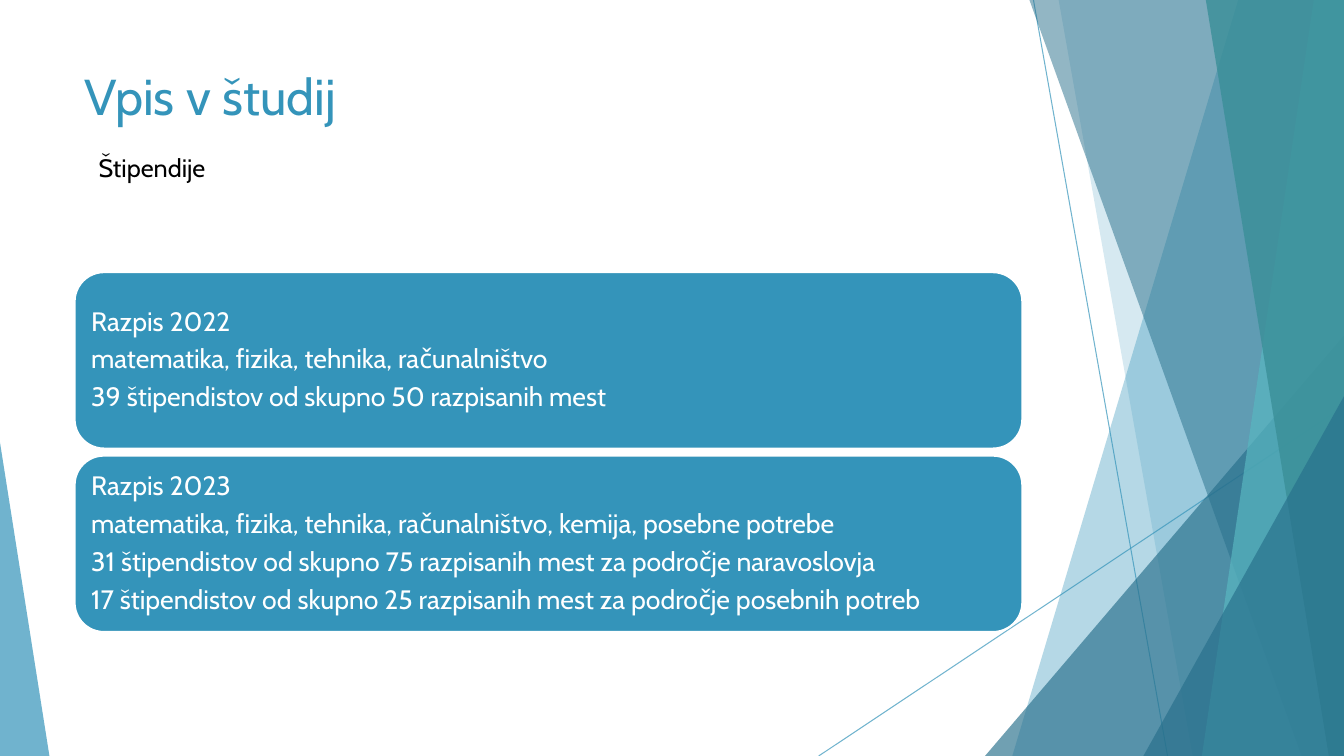
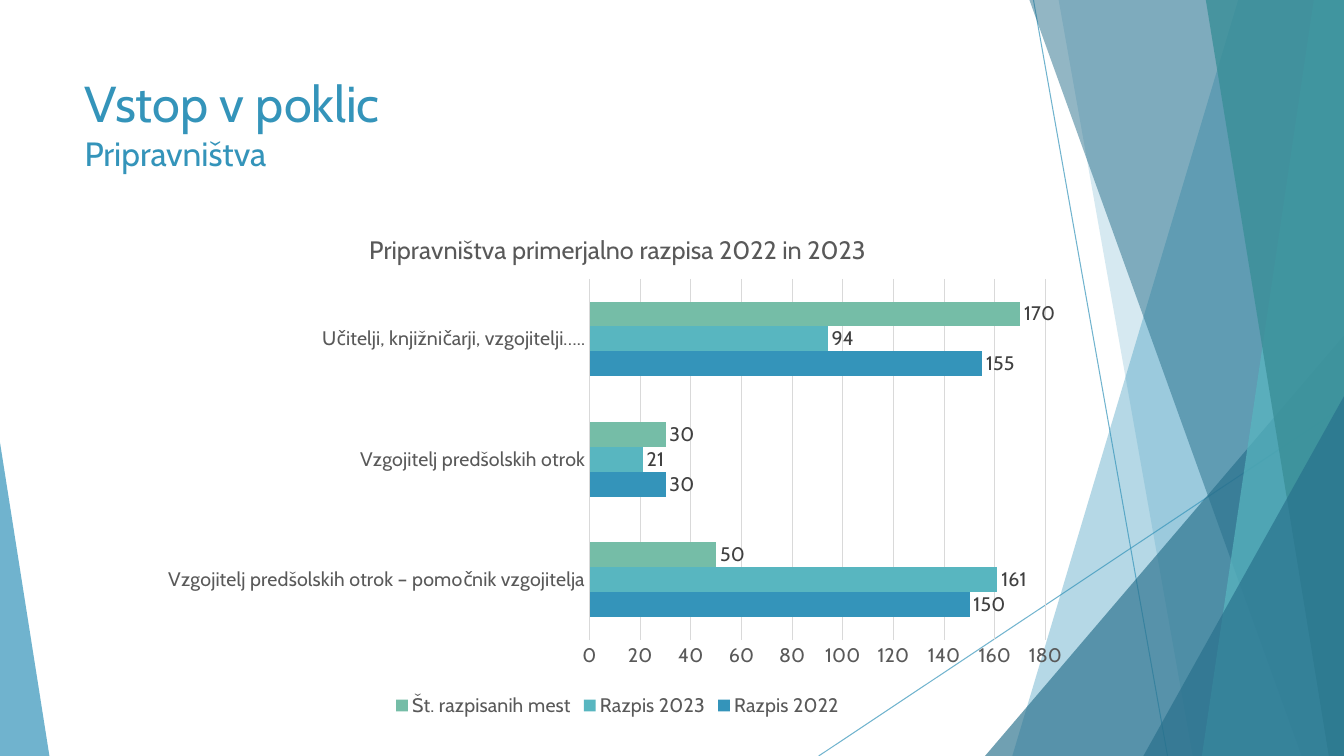
from lxml.etree import SubElement
from pptx import Presentation
from pptx.chart.data import CategoryChartData
from pptx.dml.color import RGBColor
from pptx.enum.chart import XL_CHART_TYPE, XL_LABEL_POSITION, XL_LEGEND_POSITION, XL_TICK_MARK
from pptx.enum.shapes import MSO_CONNECTOR, MSO_SHAPE
from pptx.enum.text import MSO_ANCHOR, PP_ALIGN
from pptx.oxml.ns import qn
from pptx.util import Inches, Pt

FONT = "Cabin"
BLUE = RGBColor(0x34, 0x94, 0xBA)
DARK_BLUE = RGBColor(0x27, 0x6F, 0x8B)
TURQUOISE = RGBColor(0x58, 0xB6, 0xC0)
DARK_TURQUOISE = RGBColor(0x3A, 0x8F, 0x98)
GREEN = RGBColor(0x75, 0xBD, 0xA7)
WHITE = RGBColor(0xFF, 0xFF, 0xFF)
BLACK = RGBColor(0x00, 0x00, 0x00)
LABEL_GRAY = RGBColor(0x40, 0x40, 0x40)
TEXT_GRAY = RGBColor(0x59, 0x59, 0x59)
GRID_GRAY = RGBColor(0xD9, 0xD9, 0xD9)

WIDTH, HEIGHT = 13.33, 7.5
LEFT, CONTENT_WIDTH = 0.74, 9.4


class Deck:
    """Holds the shared style and the slide being built."""

    def __init__(self):
        self.presentation = Presentation()
        self.presentation.slide_width = Inches(WIDTH)
        self.presentation.slide_height = Inches(HEIGHT)
        self.slide = None

    def new_slide(self):
        self.slide = self.presentation.slides.add_slide(self.presentation.slide_layouts[6])
        self.line(10.25, 0, 11.58, HEIGHT)
        self.line(WIDTH, 4.03, 8.12, HEIGHT)
        self.band(12.28, 10.04, BLUE, 36)
        self.band(10.5, 11.83, BLUE, 20)
        self.triangle(9.77, 3.33, 3.56, 1, DARK_BLUE, 66)
        self.band(10.21, 12.91, DARK_BLUE, 50)
        self.band(13.03, 11.92, TURQUOISE, 70)
        self.band(11.96, 13.18, DARK_TURQUOISE, 80)
        self.triangle(11.34, 3.93, 1.99, 1, DARK_BLUE, 66)
        self.triangle(0, 4.39, 0.49, 0, BLUE, 70)

    def set_opacity(self, shape, percent):
        for color in shape._element.spPr.iter(qn("a:srgbClr")):
            SubElement(color, qn("a:alpha"), val=str(percent * 1000))

    def paint(self, shape, color, percent):
        shape.shadow.inherit = False
        shape.fill.solid()
        shape.fill.fore_color.rgb = color
        shape.line.fill.background()
        self.set_opacity(shape, percent)

    def line(self, start_x, start_y, end_x, end_y):
        connector = self.slide.shapes.add_connector(
            MSO_CONNECTOR.STRAIGHT, Inches(start_x), Inches(start_y), Inches(end_x), Inches(end_y))
        connector.line.color.rgb = BLUE
        connector.line.width = Pt(0.75)
        self.set_opacity(connector, 70)
        SubElement(connector._element.spPr, qn("a:effectLst"))

    def band(self, top_x, bottom_x, color, percent):
        builder = self.slide.shapes.build_freeform(Inches(top_x), 0)
        corners = [(WIDTH, 0), (WIDTH, HEIGHT), (bottom_x, HEIGHT)]
        builder.add_line_segments([(Inches(x), Inches(y)) for x, y in corners])
        self.paint(builder.convert_to_shape(), color, percent)

    def triangle(self, left, top, width, apex, color, percent):
        shape = self.slide.shapes.add_shape(
            MSO_SHAPE.ISOSCELES_TRIANGLE, Inches(left), Inches(top), Inches(width), Inches(HEIGHT - top))
        shape.adjustments[0] = apex
        self.paint(shape, color, percent)

    def style(self, font, size, color):
        font.name = FONT
        font.size = Pt(size)
        font.bold = False
        font.color.rgb = color

    def add_run(self, paragraph, text, size, color):
        run = paragraph.add_run()
        run.text = text
        self.style(run.font, size, color)

    def text(self, left, top, width, height, lines, color, line_spacing=1.0):
        box = self.slide.shapes.add_textbox(Inches(left), Inches(top), Inches(width), Inches(height))
        box.text_frame.word_wrap = True
        paragraph = box.text_frame.paragraphs[0]
        paragraph.line_spacing = line_spacing
        for index, (text, size) in enumerate(lines):
            if index:
                paragraph.add_line_break()
            self.add_run(paragraph, text, size, color)

    def title(self, *lines, line_spacing=1.0):
        self.text(LEFT, 0.67, CONTENT_WIDTH, 1.44, lines, BLUE, line_spacing)

    def card(self, top, lines):
        shape = self.slide.shapes.add_shape(
            MSO_SHAPE.ROUNDED_RECTANGLE, Inches(LEFT), Inches(top), Inches(CONTENT_WIDTH), Inches(1.75))
        self.paint(shape, BLUE, 100)
        shape.line.color.rgb = WHITE
        shape.line.width = Pt(1.5)
        frame = shape.text_frame
        frame.word_wrap = True
        frame.vertical_anchor = MSO_ANCHOR.MIDDLE
        frame.margin_left = frame.margin_right = Inches(0.08)
        frame.margin_top = frame.margin_bottom = 0
        for index, text in enumerate(lines):
            paragraph = frame.add_paragraph() if index else frame.paragraphs[0]
            paragraph.alignment = PP_ALIGN.LEFT
            paragraph.line_spacing = 0.9
            paragraph.space_after = Pt(6.5)
            self.add_run(paragraph, text, 19, WHITE)

    def bar_chart(self, left, top, width, height, title, categories, series):
        data = CategoryChartData()
        data.categories = categories
        for name, values, _ in series:
            data.add_series(name, values)
        chart = self.slide.shapes.add_chart(
            XL_CHART_TYPE.BAR_CLUSTERED, Inches(left), Inches(top), Inches(width), Inches(height), data).chart
        self.style(chart.font, 14, TEXT_GRAY)
        chart.has_title = True
        self.add_run(chart.chart_title.text_frame.paragraphs[0], title, 18, TEXT_GRAY)
        chart.chart_title.include_in_layout = False
        chart.has_legend = True
        chart.legend.position = XL_LEGEND_POSITION.BOTTOM
        chart.legend.include_in_layout = False
        self.style(chart.legend.font, 14, TEXT_GRAY)

        plot = chart.plots[0]
        plot.gap_width = 182
        plot.vary_by_categories = False
        for bars, (_, _, color) in zip(plot.series, series):
            bars.format.fill.solid()
            bars.format.fill.fore_color.rgb = color
            labels = bars.data_labels
            labels.show_value = True
            labels.position = XL_LABEL_POSITION.OUTSIDE_END
            self.style(labels.font, 14, LABEL_GRAY)

        for axis in (chart.category_axis, chart.value_axis):
            axis.major_tick_mark = axis.minor_tick_mark = XL_TICK_MARK.NONE
            self.style(axis.tick_labels.font, 14, TEXT_GRAY)
        chart.category_axis.format.line.color.rgb = GRID_GRAY
        value_axis = chart.value_axis
        value_axis.minimum_scale, value_axis.maximum_scale, value_axis.major_unit = 0, 180, 20
        value_axis.format.line.fill.background()
        value_axis.major_gridlines.format.line.color.rgb = GRID_GRAY
        value_axis.major_gridlines.format.line.width = Pt(0.75)
        self.place_plot(chart, x=0.47, y=0.13, w=0.49, h=0.71)

    def place_plot(self, chart, **fractions):
        plot_area = chart._chartSpace.chart.plotArea
        for layout in plot_area.findall(qn("c:layout")):
            plot_area.remove(layout)
        layout = SubElement(plot_area, qn("c:layout"))
        plot_area.insert(0, layout)
        manual = SubElement(layout, qn("c:manualLayout"))
        SubElement(manual, qn("c:layoutTarget"), val="inner")
        for side in "xy":
            SubElement(manual, qn(f"c:{side}Mode"), val="edge")
        for side, fraction in fractions.items():
            SubElement(manual, qn(f"c:{side}"), val=str(fraction))


def main():
    deck = Deck()

    deck.new_slide()
    deck.title(("Vpis v študij", 36), line_spacing=0.9)
    cards = [
        ["Razpis 2022",
         "matematika, fizika, tehnika, računalništvo",
         "39 štipendistov od skupno 50 razpisanih mest"],
        ["Razpis 2023",
         "matematika, fizika, tehnika, računalništvo, kemija, posebne potrebe",
         "31 štipendistov od skupno 75 razpisanih mest za področje naravoslovja",
         "17 štipendistov od skupno 25 razpisanih mest za področje posebnih potreb"],
    ]
    for index, lines in enumerate(cards):
        deck.card(2.7 + index * 1.82, lines)
    deck.text(0.88, 1.46, 2.62, 0.4, [("Štipendije", 18)], BLACK)

    deck.new_slide()
    deck.title(("Vstop v poklic", 36), ("Pripravništva", 24))
    deck.bar_chart(
        1.51, 2.11, 9.23, 5.05,
        "Pripravništva primerjalno razpisa 2022 in 2023",
        ["Vzgojitelj predšolskih otrok – pomočnik vzgojitelja",
         "Vzgojitelj predšolskih otrok",
         "Učitelji, knjižničarji, vzgojitelji….."],
        [("Razpis 2022", (150, 30, 155), BLUE),
         ("Razpis 2023", (161, 21, 94), TURQUOISE),
         ("Št. razpisanih mest", (50, 30, 170), GREEN)])

    deck.presentation.save("out.pptx")


if __name__ == "__main__":
    main()
